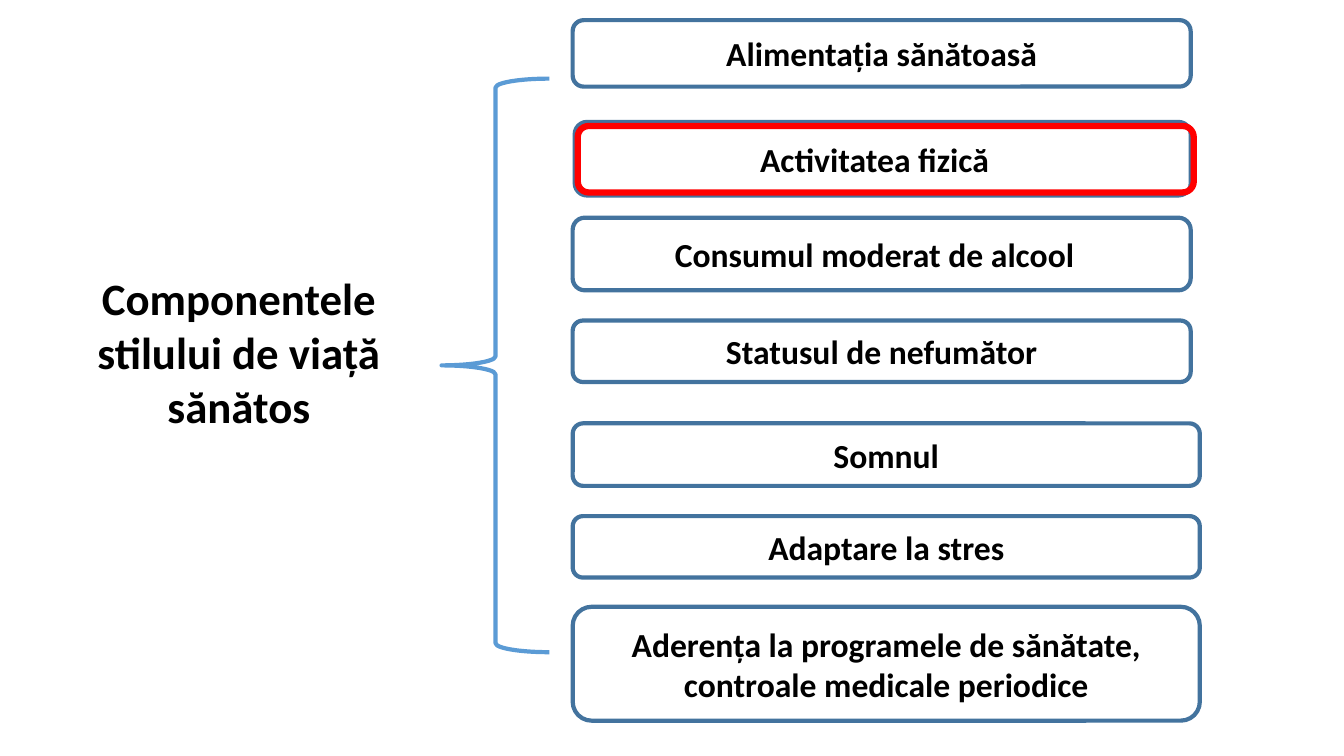
from dataclasses import dataclass

from pptx import Presentation
from pptx.dml.color import RGBColor
from pptx.enum.shapes import MSO_SHAPE as Shape
from pptx.enum.text import MSO_ANCHOR as Anchor, MSO_AUTO_SIZE as AutoSize, PP_ALIGN as Align
from pptx.util import Inches, Pt


@dataclass(frozen=True)
class Theme:
    font: str = "Calibri"
    text: str = "000000"
    paper: str = "FFFFFF"
    border: str = "43739E"
    brace: str = "5B9BD5"
    highlight: str = "FF0000"
    title_size: float = 32
    item_size: float = 24
    line_width: float = 3
    highlight_width: float = 4.5


def write(frame, text, *, theme, size, right_inset=0.1):
    """Write bold, centred text into a frame."""
    frame.word_wrap = True
    frame.auto_size = AutoSize.NONE
    frame.vertical_anchor = Anchor.MIDDLE
    frame.margin_right = Inches(right_inset)
    paragraph = frame.paragraphs[0]
    paragraph.alignment = Align.CENTER
    run = paragraph.add_run()
    run.text = text
    run.font.name = theme.font
    run.font.size = Pt(size)
    run.font.bold = True
    run.font.color.rgb = RGBColor.from_string(theme.text)


class SlideBuilder:
    def __init__(self, slide, theme):
        self.slide = slide
        self.theme = theme

    def title(self, text, left, top, width, height):
        heading = self.slide.shapes.title
        heading.left, heading.top = Inches(left), Inches(top)
        heading.width, heading.height = Inches(width), Inches(height)
        write(heading.text_frame, text, theme=self.theme, size=self.theme.title_size)

    def outline(self, preset, box, color, width, fill=None):
        shape = self.slide.shapes.add_shape(preset, *map(Inches, box))
        shape.shadow.inherit = False
        if fill:
            shape.fill.solid()
            shape.fill.fore_color.rgb = RGBColor.from_string(fill)
        else:
            shape.fill.background()
        shape.line.color.rgb = RGBColor.from_string(color)
        shape.line.width = Pt(width)
        return shape

    def component(self, text, box, right_inset):
        theme = self.theme
        card = self.outline(Shape.ROUNDED_RECTANGLE, box, theme.border,
                            theme.line_width, fill=theme.paper)
        write(card.text_frame, text, theme=theme, size=theme.item_size,
              right_inset=right_inset)

    def brace(self, *box):
        self.outline(Shape.LEFT_BRACE, box, self.theme.brace, self.theme.line_width)

    def highlight(self, *box):
        self.outline(Shape.ROUNDED_RECTANGLE, box, self.theme.highlight,
                     self.theme.highlight_width)


# Text, left, top, width, height, right inset
COMPONENTS = [
    ("Alimentația sănătoasă", 5.68, 0.2, 6.13, 0.66, 0.1),
    ("Activitatea fizică", 5.7, 1.21, 6.11, 0.73, 0.26),
    ("Consumul moderat de alcool", 5.68, 2.16, 6.13, 0.72, 0.24),
    ("Statusul de nefumător", 5.68, 3.18, 6.13, 0.61, 0.1),
    ("Somnul", 5.68, 4.2, 6.22, 0.62, 0.1),
    ("Adaptare la stres", 5.68, 5.12, 6.22, 0.61, 0.1),
    ("Aderența la programele de sănătate, controale medicale periodice",
     5.68, 6.02, 6.22, 1.13, 0.1),
]


def main():
    deck = Presentation()
    deck.slide_width, deck.slide_height = Inches(13.33), Inches(7.5)
    title_only = deck.slide_layouts[5]
    builder = SlideBuilder(deck.slides.add_slide(title_only), Theme())

    # Topic on the left
    builder.title("Componentele stilului de viață sănătos", 0.67, 2.63, 3.4, 1.72)

    # Lifestyle components on the right
    for text, *box, right_inset in COMPONENTS:
        builder.component(text, box, right_inset)

    # Brace between them, and the frame around physical activity
    builder.brace(4.38, 0.78, 1.07, 5.69)
    builder.highlight(5.73, 1.25, 6.11, 0.66)

    deck.save("out.pptx")


if __name__ == "__main__":
    main()
